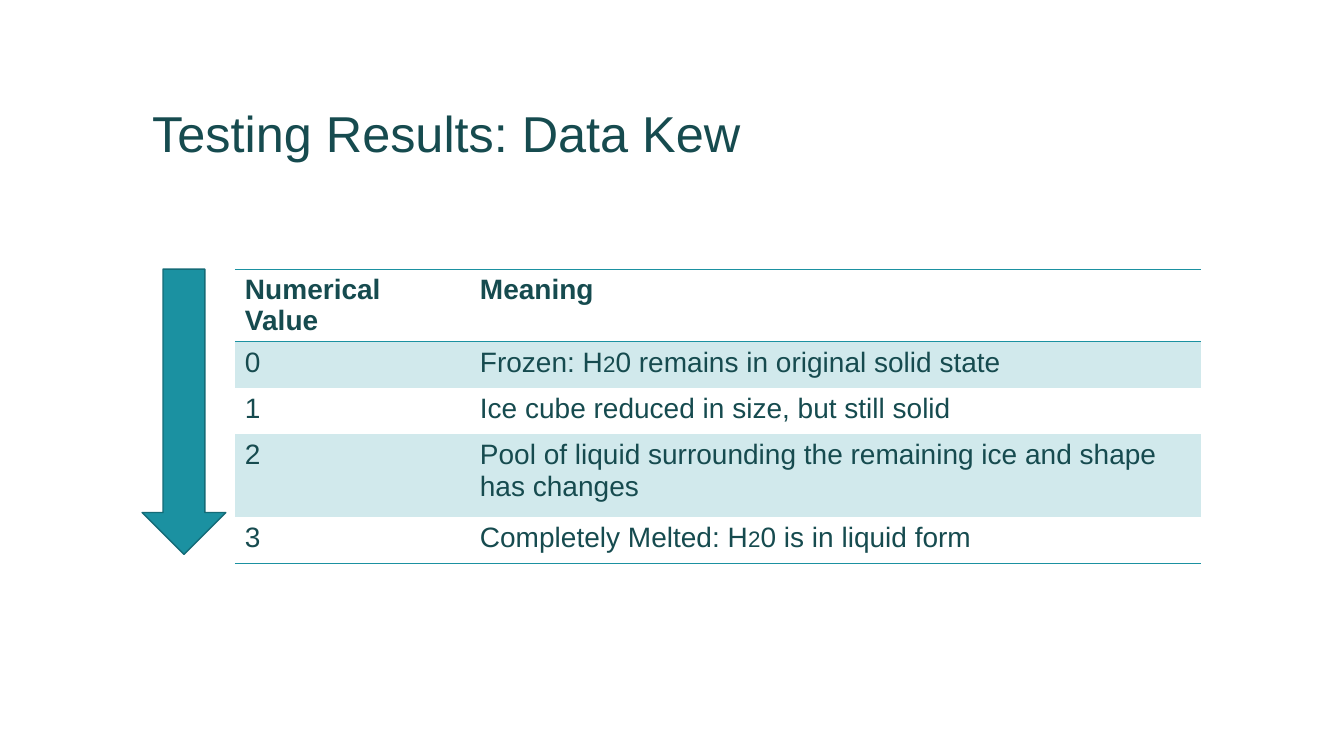
from lxml.etree import SubElement
from pptx import Presentation
from pptx.dml.color import RGBColor
from pptx.enum.shapes import MSO_SHAPE
from pptx.enum.text import MSO_ANCHOR, PP_ALIGN
from pptx.oxml.ns import qn
from pptx.util import Inches, Pt

INK = "164B4F"
TEAL = "1B91A1"
EDGE = "146B77"
BAND = "D1E9EC"

ROWS = [
    (["Numerical Value"], ["Meaning"]),
    (["0"], ["Frozen: H", "2", "0 remains in original solid state"]),
    (["1"], ["Ice cube reduced in size, but still solid"]),
    (["2"], ["Pool of liquid surrounding the remaining ice and shape has changes"]),
    (["3"], ["Completely Melted: H", "2", "0 is in liquid form"]),
]
WIDTHS = [2.33, 7.25]
HEIGHTS = [0.46, 0.46, 0.46, 0.82, 0.46]


def color(code):
    return RGBColor.from_string(code)


def add_run(para, text, size, bold=False):
    run = para.add_run()
    run.text = text
    run.font.name = "Arial"
    run.font.size = Pt(size)
    run.font.bold = bold
    run.font.color.rgb = color(INK)


def add_title(slide, text):
    title = slide.shapes.title
    title.left, title.top = Inches(1.41), Inches(0.42)
    title.width, title.height = Inches(10.5), Inches(1.25)
    frame = title.text_frame
    frame.word_wrap = True
    frame.vertical_anchor = MSO_ANCHOR.BOTTOM
    para = frame.paragraphs[0]
    para.alignment = PP_ALIGN.LEFT
    para.line_spacing = 0.9
    add_run(para, text, 36)


def set_edges(cell, shown):
    props = cell._tc.get_or_add_tcPr()
    for index, side in enumerate(("lnL", "lnR", "lnT", "lnB")):
        line = props.makeelement(qn(f"a:{side}"), {"w": str(Pt(1))})
        if side in shown:
            fill = SubElement(line, qn("a:solidFill"))
            SubElement(fill, qn("a:srgbClr"), val=TEAL)
        else:
            SubElement(line, qn("a:noFill"))
        props.insert(index, line)


def fill_cell(cell, parts, row):
    para = cell.text_frame.paragraphs[0]
    for index, part in enumerate(parts):
        add_run(para, part, 16 if index == 1 else 20, row == 0)
    if row % 2:
        cell.fill.solid()
        cell.fill.fore_color.rgb = color(BAND)
    else:
        cell.fill.background()
    edges = {0: ("lnT", "lnB"), 1: ("lnT",), len(ROWS) - 1: ("lnB",)}
    set_edges(cell, edges.get(row, ()))


def add_key(slide):
    frame = slide.shapes.add_table(
        len(ROWS), len(WIDTHS), Inches(2.33), Inches(2.67),
        Inches(sum(WIDTHS)), Inches(sum(HEIGHTS)))
    table = frame.table
    table.horz_banding = False
    for column, width in zip(table.columns, WIDTHS):
        column.width = Inches(width)
    for row, (cells, height) in enumerate(zip(ROWS, HEIGHTS)):
        table.rows[row].height = Inches(height)
        for col, parts in enumerate(cells):
            fill_cell(table.cell(row, col), parts, row)


def add_arrow(slide):
    arrow = slide.shapes.add_shape(
        MSO_SHAPE.DOWN_ARROW, Inches(1.41), Inches(2.67),
        Inches(0.83), Inches(2.83))
    arrow.shadow.inherit = False
    arrow.fill.solid()
    arrow.fill.fore_color.rgb = color(TEAL)
    arrow.line.color.rgb = color(EDGE)
    arrow.line.width = Pt(1)


def main():
    deck = Presentation()
    deck.slide_width, deck.slide_height = Inches(13.33), Inches(7.5)
    slide = deck.slides.add_slide(deck.slide_layouts[5])
    add_title(slide, "Testing Results: Data Kew")
    add_key(slide)
    add_arrow(slide)
    deck.save("out.pptx")


if __name__ == "__main__":
    main()
